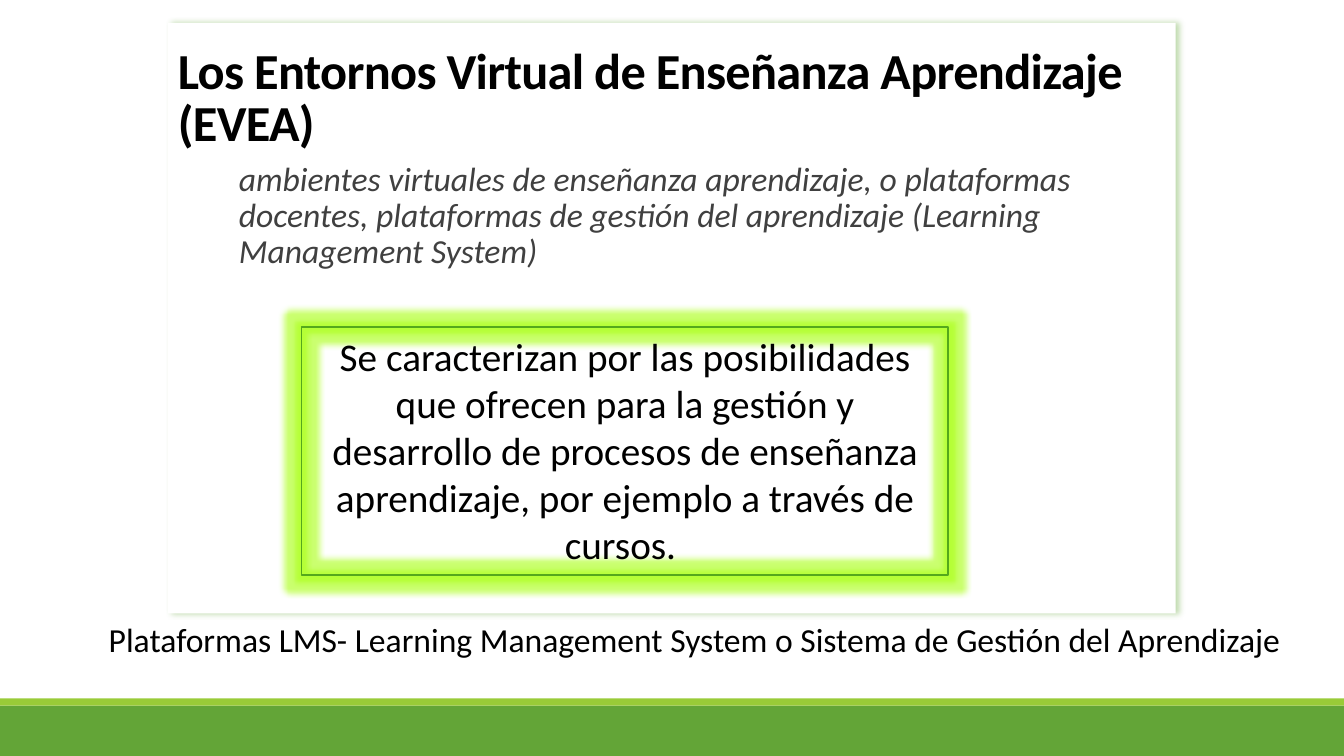
from lxml.etree import SubElement
from pptx import Presentation
from pptx.dml.color import RGBColor
from pptx.enum.shapes import MSO_SHAPE
from pptx.enum.text import MSO_ANCHOR, MSO_AUTO_SIZE, PP_ALIGN
from pptx.oxml.ns import qn
from pptx.util import Cm, Pt

GREEN = RGBColor(0x63, 0xA5, 0x37)
LIME = RGBColor(0x99, 0xCB, 0x38)
GLOW = RGBColor(0xA8, 0xFF, 0x10)
OUTLINE = RGBColor(0x54, 0xA8, 0x1C)
WHITE = RGBColor(0xFF, 0xFF, 0xFF)
BLACK = RGBColor(0, 0, 0)
GRAY = RGBColor(0x40, 0x40, 0x40)


class SlideBuilder:
    font_name = "Calibri"

    def __init__(self, presentation):
        self.slide = presentation.slides.add_slide(presentation.slide_layouts[5])

    def set_text(self, shape, text, size, color=BLACK, align=PP_ALIGN.LEFT,
                 anchor=MSO_ANCHOR.TOP, wrap=True, bold=False, italic=False):
        frame = shape.text_frame
        frame.text = text
        frame.word_wrap = wrap
        frame.auto_size = MSO_AUTO_SIZE.NONE
        frame.vertical_anchor = anchor
        paragraph = frame.paragraphs[0]
        paragraph.alignment = align
        font = paragraph.font
        font.name, font.size = self.font_name, Pt(size)
        font.bold, font.italic = bold, italic
        font.color.rgb = color
        return paragraph

    def title(self, text, left, top, width, height):
        heading = self.slide.shapes.title
        heading.left, heading.top = Cm(left), Cm(top)
        heading.width, heading.height = Cm(width), Cm(height)
        paragraph = self.set_text(heading, text, 36, anchor=MSO_ANCHOR.BOTTOM, bold=True)
        paragraph.line_spacing = 0.85
        paragraph.runs[0].font._element.set("spc", "-50")
        self.slide.shapes._spTree.append(heading._element)

    def text(self, text, left, top, width, height, **style):
        box = self.slide.shapes.add_textbox(Cm(left), Cm(top), Cm(width), Cm(height))
        return box, self.set_text(box, text, 24, **style)

    def rectangle(self, left, top, width, height, fill=None, line=None):
        shape = self.slide.shapes.add_shape(
            MSO_SHAPE.RECTANGLE, Cm(left), Cm(top), Cm(width), Cm(height))
        shape.shadow.inherit = False
        if fill is None:
            shape.fill.background()
        else:
            shape.fill.solid()
            shape.fill.fore_color.rgb = fill
        if line is None:
            shape.line.fill.background()
        else:
            shape.line.color.rgb = line
            shape.line.width = Pt(1.25)
        return shape

    def effect(self, shape, kind, color, alpha, **lengths):
        effects = shape._element.spPr.find(qn("a:effectLst"))
        attributes = {key: str(int(value)) for key, value in lengths.items()}
        effect = SubElement(effects, qn(f"a:{kind}"), attributes)
        tint = SubElement(effect, qn("a:srgbClr"), val=str(color))
        SubElement(tint, qn("a:alpha"), val=str(alpha * 1000))


def main():
    presentation = Presentation()
    presentation.slide_width, presentation.slide_height = Cm(33.87), Cm(19.05)
    builder = SlideBuilder(presentation)

    builder.rectangle(0, 17.78, 33.87, 1.27, fill=GREEN)
    builder.rectangle(0, 17.6, 33.87, 0.18, fill=LIME)
    panel = builder.rectangle(4.23, 0.58, 25.4, 14.88, fill=WHITE)
    builder.effect(panel, "outerShdw", GREEN, 40, blurRad=Pt(4), dist=Pt(3), dir=0)

    builder.title("Los Entornos Virtual de Enseñanza Aprendizaje (EVEA)",
                  4.23, 0.76, 26.92, 3.18)

    synonyms, paragraph = builder.text(
        "ambientes virtuales de enseñanza aprendizaje, o plataformas docentes, "
        "plataformas de gestión del aprendizaje (Learning Management System)",
        6.02, 3.96, 22.86, 3.38, color=GRAY, italic=True)
    synonyms.text_frame.margin_left = synonyms.text_frame.margin_right = 0
    paragraph.line_spacing = 0.9
    paragraph.space_before, paragraph.space_after = Pt(12), Pt(2)

    features = builder.rectangle(7.6, 8.25, 16.3, 6.25, line=OUTLINE)
    builder.effect(features, "glow", GLOW, 60, rad=Pt(8))
    builder.set_text(
        features,
        "Se caracterizan por las posibilidades que ofrecen para la gestión y "
        "desarrollo de procesos de enseñanza aprendizaje, por ejemplo a través "
        "de cursos. ",
        28, align=PP_ALIGN.CENTER)

    builder.text("Plataformas LMS- Learning Management System o Sistema de "
                 "Gestión del Aprendizaje", 2.49, 15.47, 30.12, 1.27, wrap=False)

    presentation.save("out.pptx")


if __name__ == "__main__":
    main()
